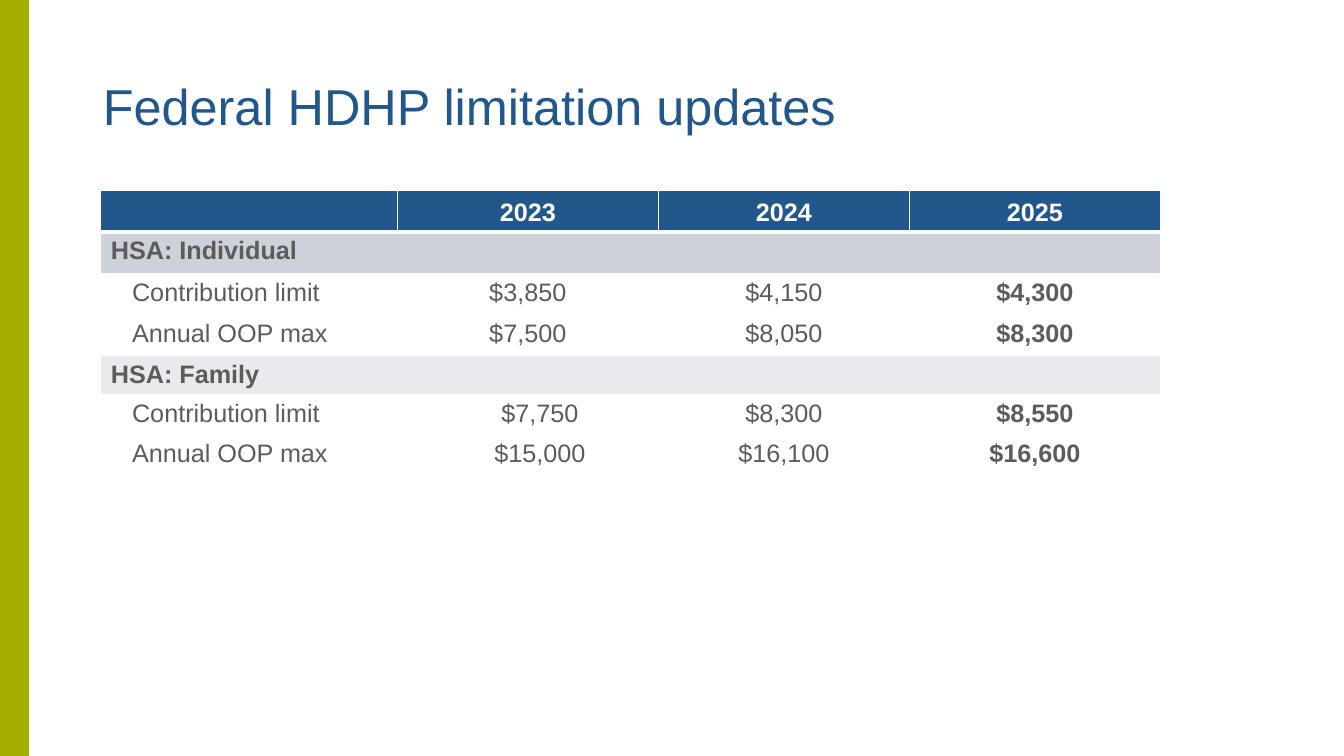
from lxml import etree
from pptx import Presentation
from pptx.dml.color import RGBColor
from pptx.enum.shapes import MSO_SHAPE
from pptx.enum.text import MSO_ANCHOR, PP_ALIGN
from pptx.oxml.ns import qn
from pptx.util import Pt

RECT = MSO_SHAPE.RECTANGLE
TOP, MIDDLE, BOTTOM = MSO_ANCHOR.TOP, MSO_ANCHOR.MIDDLE, MSO_ANCHOR.BOTTOM
LEFT, CENTER = PP_ALIGN.LEFT, PP_ALIGN.CENTER

PX = 9144  # 100 px to the inch
GREEN = RGBColor(0xA2, 0xAD, 0x00)
BLUE = RGBColor(0x21, 0x57, 0x8A)
GRAY = RGBColor(0x5D, 0x5B, 0x5B)
BAND = RGBColor(0xCD, 0xD1, 0xDA)
PALE = RGBColor(0xE8, 0xEA, 0xED)
WHITE = RGBColor(0xFF, 0xFF, 0xFF)

COLS = [294, 24, 235, 249, 249]
HEADS = ["", "2023", "2024", "2025"]
# Each group: name, band fill, columns its labels span, rows
GROUPS = [
    ("HSA: Individual", BAND, 1, [
        ("Contribution limit", "$3,850", "$4,150", "$4,300"),
        ("Annual OOP max", "$7,500", "$8,050", "$8,300")]),
    ("HSA: Family", PALE, 2, [
        ("Contribution limit", "$7,750", "$8,300", "$8,550"),
        ("Annual OOP max", "$15,000", "$16,100", "$16,600")]),
]
HEIGHTS = [41, 41, 41, 41, 38, 38, 38]
INDENT = 31


def scale(box):
    return [n * PX for n in box]


def style(font, **looks):
    color = looks.pop("color")
    for key, value in looks.items():
        setattr(font, key, value)
    font.color.rgb = color


def edge(cell, low):
    """Give a cell white borders, the bottom one low points wide."""
    props = cell._tc.get_or_add_tcPr()
    for side, width in dict(L=1, R=1, T=1, B=low).items():
        line = etree.SubElement(props, qn("a:ln" + side), w=str(Pt(width)))
        fill = etree.SubElement(line, qn("a:solidFill"))
        etree.SubElement(fill, qn("a:srgbClr"), val=str(WHITE))


def write(cell, text, color=GRAY, bold=False, align=LEFT, anchor=TOP):
    cell.vertical_anchor = anchor
    para = cell.text_frame.paragraphs[0]
    para.alignment = align
    para.font.size = Pt(18)
    if text:
        run = para.add_run()
        run.text = text
        style(run.font, name="Arial", size=Pt(18), bold=bold, color=color)


def add_bar(slide, box):
    bar = slide.shapes.add_shape(RECT, *scale(box))
    bar.shadow.inherit = False
    bar.fill.solid()
    bar.fill.fore_color.rgb = GREEN
    bar.line.fill.background()


def add_title(slide, box, text):
    title = slide.shapes.title
    title.left, title.top, title.width, title.height = scale(box)
    frame = title.text_frame
    frame.text = text
    frame.word_wrap = True
    frame.vertical_anchor = MIDDLE
    para = frame.paragraphs[0]
    para.alignment = LEFT
    para.line_spacing = 0.9
    style(para.runs[0].font, name="Arial", size=Pt(36), color=BLUE)


def add_limits(slide, box):
    table = slide.shapes.add_table(len(HEIGHTS), len(COLS), *scale(box)).table
    table.horz_banding = False
    for col, width in zip(table.columns, COLS):
        col.width = width * PX
    for row, height in zip(table.rows, HEIGHTS):
        row.height = height * PX

    # Fills and borders by row
    fills = [BLUE]
    for _, fill, _, rows in GROUPS:
        fills += [fill] + [WHITE] * len(rows)
    for r, fill in enumerate(fills):
        for c in range(len(COLS)):
            cell = table.cell(r, c)
            edge(cell, 3 if r == 0 else 1)
            cell.fill.solid()
            cell.fill.fore_color.rgb = fill

    # Header
    table.cell(0, 1).merge(table.cell(0, 2))
    for c, head in zip((0, 1, 3, 4), HEADS):
        write(table.cell(0, c), head, WHITE, True, CENTER, BOTTOM)

    # Groups
    r = 1
    for name, _, span, rows in GROUPS:
        table.cell(r, 0).merge(table.cell(r, len(COLS) - 1))
        write(table.cell(r, 0), name, bold=True)
        for label, *sums in rows:
            r += 1
            # The narrow second column joins the label or the first sum
            table.cell(r, span - 1 and 0 or 1).merge(
                table.cell(r, 1 if span == 2 else 2))
            first = table.cell(r, 0)
            first.margin_left = INDENT * PX
            write(first, label)
            for c, value in zip((span, 3, 4), sums):
                write(table.cell(r, c), value, bold=c == 4, align=CENTER)
        r += 1


def main():
    deck = Presentation()
    deck.slide_width, deck.slide_height = scale((1333, 750))
    slide = deck.slides.add_slide(deck.slide_layouts[5])
    add_bar(slide, (0, 0, 29, 750))
    add_title(slide, (92, 24, 1150, 169), "Federal HDHP limitation updates")
    add_limits(slide, (100, 189, sum(COLS), sum(HEIGHTS)))
    deck.save("out.pptx")


if __name__ == "__main__":
    main()
